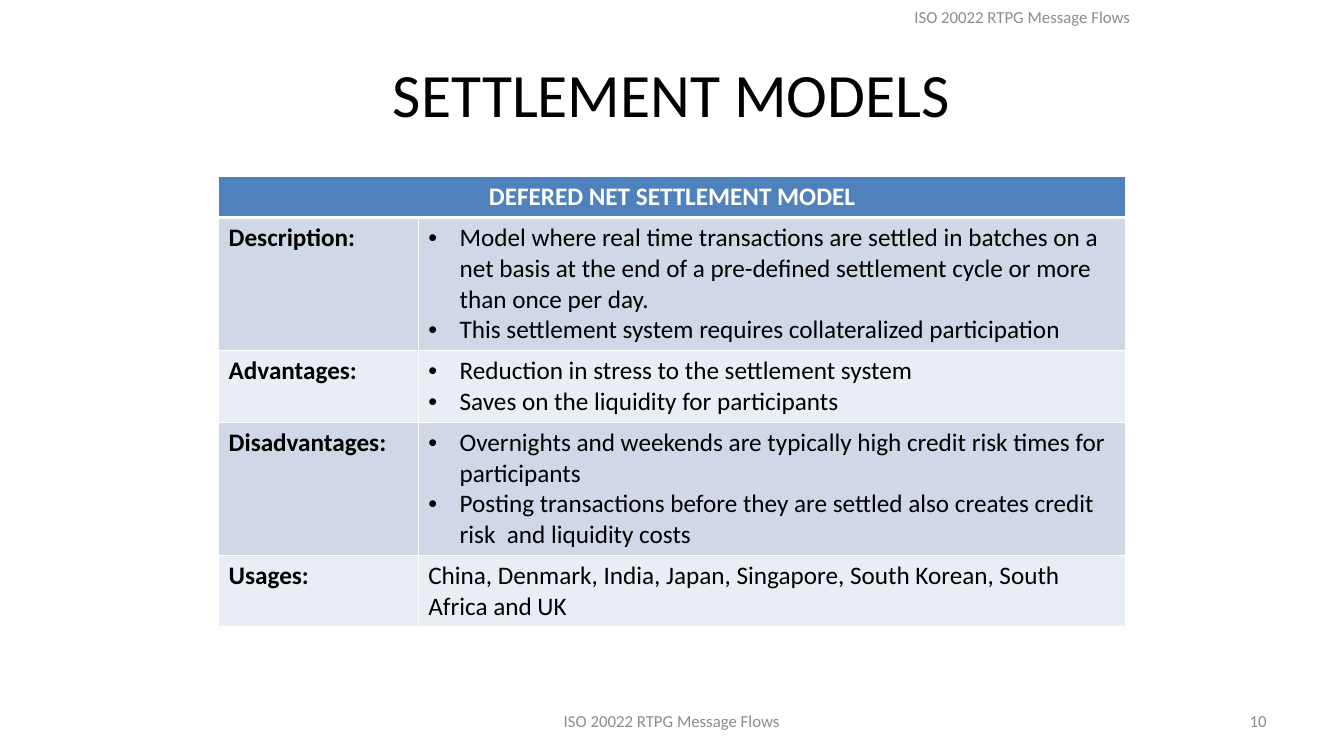
from dataclasses import dataclass

import pptx
import pptx.dml.color
import pptx.enum.text
import pptx.oxml
import pptx.oxml.ns
import pptx.util
from pptx.util import Cm, Pt

Align = pptx.enum.text.PP_ALIGN
Anchor = pptx.enum.text.MSO_ANCHOR


@dataclass(frozen=True)
class Theme:
    font: str = "Calibri"
    black: str = "000000"
    white: str = "FFFFFF"
    grey: str = "8C8C8C"
    head: str = "4F81BD"
    bands: tuple[str, str] = ("D0D8E8", "E9EDF4")
    title: int = 44
    body: int = 18
    small: int = 12
    rule: int = 1
    thick: int = 3


@dataclass(frozen=True)
class Row:
    label: str
    lines: tuple[str, ...]
    height: float
    listed: bool = True


@dataclass(frozen=True)
class Note:
    text: str
    left: float
    top: float
    width: float
    align: Align


THEME = Theme()
FLOWS = "ISO 20022 RTPG Message Flows"
HEAD = "DEFERED NET SETTLEMENT MODEL"
HEAD_H = 1.03
COLS = (5.03, 17.83)
INDENT = Cm(0.79)

ROWS = (
    Row("Description:", (
        "Model where real time transactions are settled in batches on a net basis "
        "at the end of a pre-defined settlement cycle or more than once per day.",
        "This settlement system requires collateralized participation",
    ), 3.35),
    Row("Advantages:", (
        "Reduction in stress to the settlement system",
        "Saves on the liquidity for participants",
    ), 1.8),
    Row("Disadvantages:", (
        "Overnights and weekends are typically high credit risk times for participants",
        "Posting transactions before they are settled also creates credit "
        "risk  and liquidity costs",
    ), 3.35),
    Row("Usages:", (
        "China, Denmark, India, Japan, Singapore, South Korean, South Africa and UK",
    ), 1.8, listed=False),
)

NOTES = (
    Note(FLOWS, 11.57, 17.65, 10.72, Align.CENTER),
    Note("10", 24.27, 17.65, 7.9, Align.RIGHT),
    Note(FLOWS, 21.74, -0.07, 8.05, Align.CENTER),
)


def style(frame, size: int, tint: str, align: Align = Align.LEFT,
          bold: bool = False) -> None:
    for para in frame.paragraphs:
        para.alignment = align
        for run in para.runs:
            run.font.name = THEME.font
            run.font.size = Pt(size)
            run.font.bold = bold
            run.font.color.rgb = pptx.dml.color.RGBColor.from_string(tint)


def bullet(para) -> None:
    props = para._p.get_or_add_pPr()
    props.set("marL", str(INDENT))
    props.set("indent", str(-INDENT))
    space = pptx.oxml.ns.nsdecls("a")
    props.append(pptx.oxml.parse_xml(f'<a:buFont {space} typeface="Arial"/>'))
    props.append(pptx.oxml.parse_xml(f'<a:buChar {space} char="•"/>'))


def paint(cell, tint: str, top: int = THEME.rule, base: int = THEME.rule) -> None:
    """Give a cell its borders and its fill."""
    props = cell._tc.get_or_add_tcPr()
    sides = (("L", THEME.rule), ("R", THEME.rule), ("T", top), ("B", base))
    for side, width in sides:
        props.append(pptx.oxml.parse_xml(
            f'<a:ln{side} {pptx.oxml.ns.nsdecls("a")} w="{Pt(width)}">'
            f'<a:solidFill><a:srgbClr val="{THEME.white}"/></a:solidFill>'
            f'</a:ln{side}>'))
    cell.fill.solid()
    cell.fill.fore_color.rgb = pptx.dml.color.RGBColor.from_string(tint)


def add_title(slide, text: str) -> None:
    title = slide.shapes.title
    title.left, title.top = Cm(1.69), Cm(0.76)
    title.width, title.height = Cm(30.48), Cm(3.18)
    frame = title.text_frame
    frame.text = text
    frame.vertical_anchor = Anchor.MIDDLE
    style(frame, THEME.title, THEME.black, Align.CENTER)


def add_grid(slide) -> None:
    total = HEAD_H + sum(row.height for row in ROWS)
    grid = slide.shapes.add_table(
        len(ROWS) + 1, len(COLS), Cm(5.51), Cm(4.45), Cm(sum(COLS)), Cm(total)).table
    for col, width in zip(grid.columns, COLS):
        col.width = Cm(width)

    grid.rows[0].height = Cm(HEAD_H)
    head = grid.cell(0, 0)
    head.merge(grid.cell(0, 1))
    head.text_frame.text = HEAD
    style(head.text_frame, THEME.body, THEME.white, Align.CENTER, bold=True)
    for col in range(len(COLS)):
        paint(grid.cell(0, col), THEME.head, base=THEME.thick)

    for index, row in enumerate(ROWS, 1):
        grid.rows[index].height = Cm(row.height)
        texts = (row.label, "\n".join(row.lines))
        for col, text in enumerate(texts):
            cell = grid.cell(index, col)
            cell.text_frame.text = text
            style(cell.text_frame, THEME.body, THEME.black, bold=col == 0)
            paint(cell, THEME.bands[(index - 1) % 2],
                  top=THEME.thick if index == 1 else THEME.rule)
        if row.listed:
            for para in grid.cell(index, 1).text_frame.paragraphs:
                bullet(para)


def add_note(slide, note: Note) -> None:
    box = slide.shapes.add_textbox(
        Cm(note.left), Cm(note.top), Cm(note.width), Cm(1.01))
    frame = box.text_frame
    frame.word_wrap = True
    frame.vertical_anchor = Anchor.MIDDLE
    frame.text = note.text
    style(frame, THEME.small, THEME.grey, note.align)


def main() -> None:
    deck = pptx.Presentation()
    deck.slide_width, deck.slide_height = Cm(33.87), Cm(19.05)
    slide = deck.slides.add_slide(deck.slide_layouts[5])
    add_title(slide, "SETTLEMENT MODELS")
    add_grid(slide)
    for note in NOTES:
        add_note(slide, note)
    deck.save("out.pptx")


if __name__ == "__main__":
    main()
